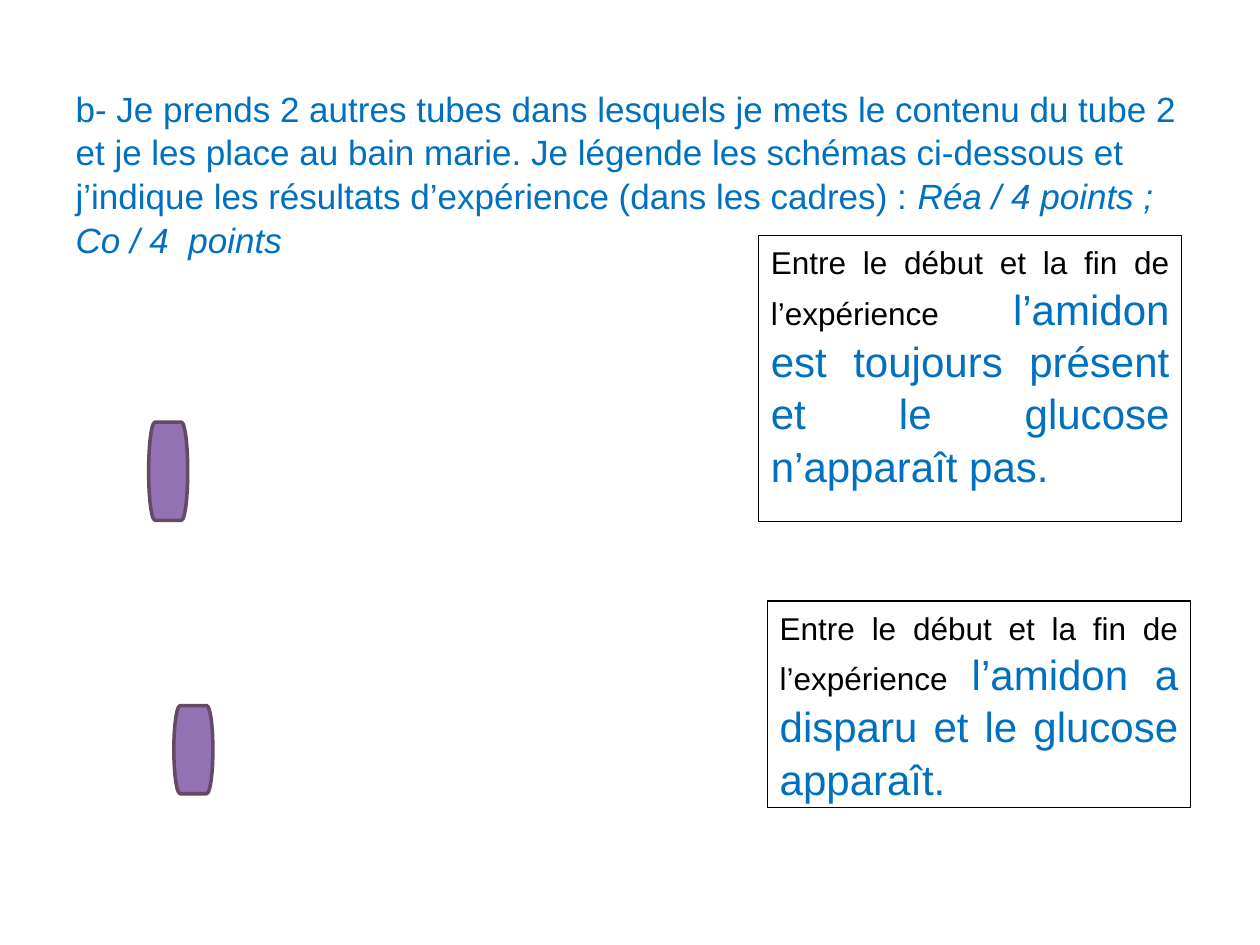
from pptx import Presentation
from pptx.dml.color import RGBColor
from pptx.enum.shapes import MSO_SHAPE
from pptx.enum.text import MSO_ANCHOR, MSO_AUTO_SIZE, PP_ALIGN
from pptx.util import Inches, Pt

RECT, TUBE = MSO_SHAPE.RECTANGLE, MSO_SHAPE.FLOWCHART_TERMINATOR
TOP, NO_FIT = MSO_ANCHOR.TOP, MSO_AUTO_SIZE.NONE
LEFT, JUSTIFY = PP_ALIGN.LEFT, PP_ALIGN.JUSTIFY

COLORS = {"blue": "0070C0", "black": "000000", "white": "FFFFFF",
          "purple": "9172B2", "plum": "664964"}


def rgb(name):
    return RGBColor.from_string(COLORS[name])


def add_run(p, text, size=20, color="blue", italic=False):
    r = p.add_run()
    r.text = text
    r.font.name = "Arial"
    r.font.size = Pt(size)
    r.font.italic = italic
    r.font.color.rgb = rgb(color)


prs = Presentation()
prs.slide_width, prs.slide_height = Inches(10), Inches(7.5)
s = prs.slides.add_slide(prs.slide_layouts[5])

# Instruction
title = s.shapes.title
title.left, title.top = Inches(0.5), Inches(0.3)
title.width, title.height = Inches(9), Inches(1.57)
tf = title.text_frame
tf.word_wrap = True
tf.auto_size = NO_FIT
tf.vertical_anchor = TOP
tf.margin_top = Inches(0.38)
p = tf.paragraphs[0]
p.alignment = LEFT
p.line_spacing = 1.04
add_run(p, "b- Je prends 2 autres tubes dans lesquels je mets le contenu du tube 2 "
           "et je les place au bain marie. Je légende les schémas ci-dessous et "
           "j’indique les résultats d’expérience (dans les cadres) : ")
add_run(p, "Réa / 4 points ; Co / 4  points", italic=True)

# Result frames
results = [
    (6.02, 1.87, 2.27, "l’amidon est toujours présent et le glucose n’apparaît pas."),
    (6.09, 4.77, 1.64, "l’amidon a disparu et le glucose apparaît."),
]
for x, y, h, answer in results:
    sp = s.shapes.add_shape(RECT, Inches(x), Inches(y), Inches(3.36), Inches(h))
    sp.shadow.inherit = False
    sp.fill.solid()
    sp.fill.fore_color.rgb = rgb("white")
    sp.line.color.rgb = rgb("black")
    sp.line.width = Pt(0.75)
    tf = sp.text_frame
    tf.word_wrap = True
    tf.vertical_anchor = TOP
    p = tf.paragraphs[0]
    p.alignment = JUSTIFY
    p.line_spacing = 1.04
    add_run(p, "Entre le début et la fin de l’expérience ", size=18, color="black")
    add_run(p, answer, size=24)

# Tube contents
for x, y, h in [(1.18, 3.35, 0.78), (1.38, 5.6, 0.7)]:
    sp = s.shapes.add_shape(TUBE, Inches(x), Inches(y), Inches(0.31), Inches(h))
    sp.shadow.inherit = False
    sp.fill.solid()
    sp.fill.fore_color.rgb = rgb("purple")
    sp.line.color.rgb = rgb("plum")
    sp.line.width = Pt(2)

prs.save("out.pptx")
